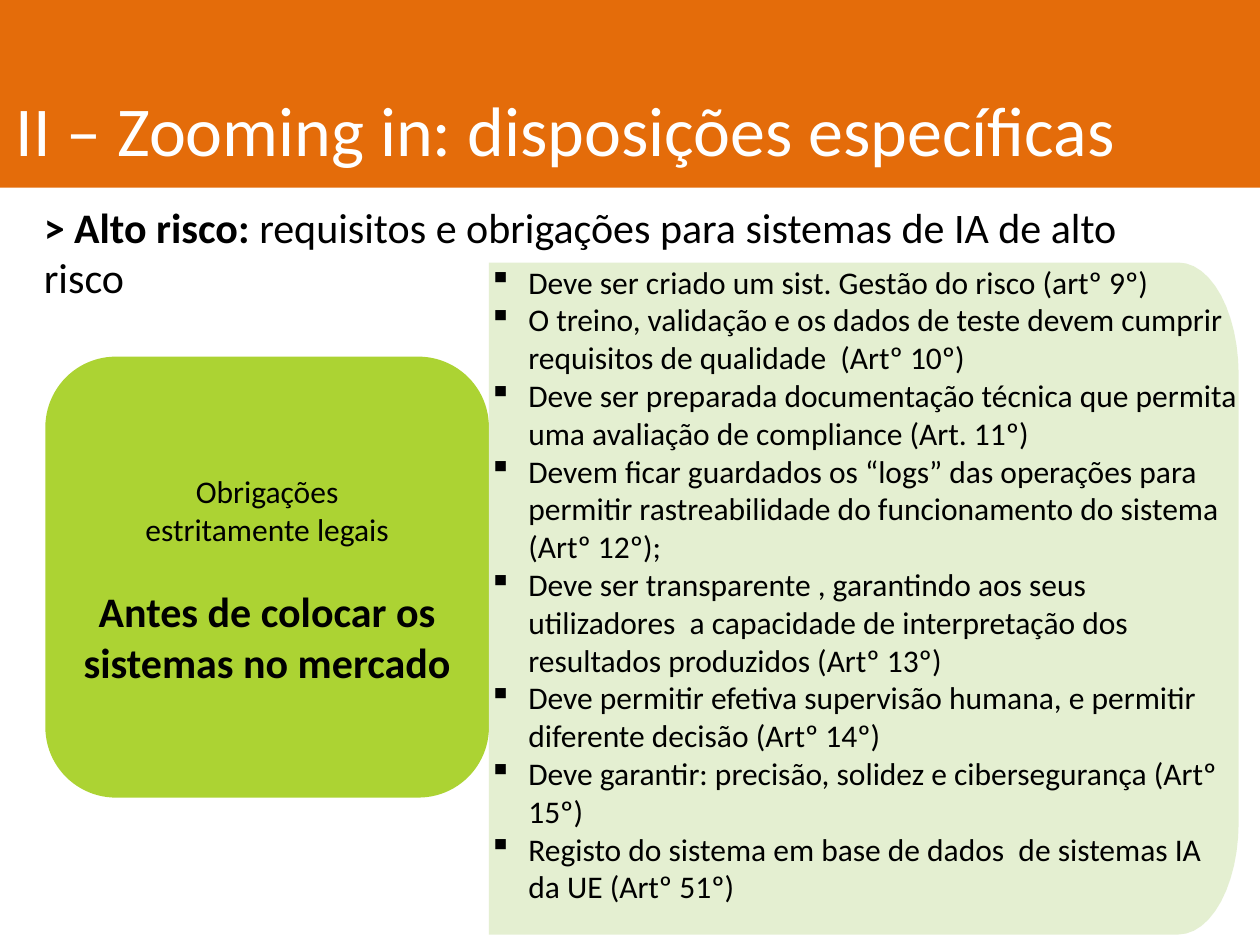
from math import cos, pi, sin

from lxml import etree
from pptx import Presentation
from pptx.dml.color import RGBColor
from pptx.enum.shapes import MSO_SHAPE
from pptx.enum.text import MSO_ANCHOR, MSO_AUTO_SIZE, PP_ALIGN
from pptx.oxml.ns import qn
from pptx.util import Pt

ROUNDED = MSO_SHAPE.ROUNDED_RECTANGLE
TOP, BOTTOM = MSO_ANCHOR.TOP, MSO_ANCHOR.BOTTOM
LEFT, CENTER = PP_ALIGN.LEFT, PP_ALIGN.CENTER
NO_FIT = MSO_AUTO_SIZE.NONE

ORANGE = RGBColor(0xE4, 0x6C, 0x0A)
GREEN = RGBColor(0xAC, 0xD3, 0x33)
PALE_GREEN = RGBColor(0xE2, 0xEE, 0xCD)
WHITE = RGBColor(0xFF, 0xFF, 0xFF)
BLACK = RGBColor(0, 0, 0)
FONT = "Calibri"
HANGING = Pt(22.5)

REQUIREMENTS = [
    "Deve ser criado um sist. Gestão do risco (artº 9º)",
    "O treino, validação e os dados de teste devem cumprir requisitos de qualidade  (Artº 10º)",
    "Deve ser preparada documentação técnica que permita uma avaliação de compliance (Art. 11º)",
    "Devem ficar guardados os “logs” das operações para permitir rastreabilidade "
    "do funcionamento do sistema (Artº 12º);",
    "Deve ser transparente , garantindo aos seus utilizadores  a capacidade de "
    "interpretação dos resultados produzidos (Artº 13º)",
    "Deve permitir efetiva supervisão humana, e permitir diferente decisão (Artº 14º)",
    "Deve garantir: precisão, solidez e cibersegurança (Artº 15º)",
    "Registo do sistema em base de dados  de sistemas IA da UE (Artº 51º)",
]


def style(font, size, color=BLACK, bold=False):
    font.name, font.size, font.bold = FONT, Pt(size), bold
    font.color.rgb = color


def set_frame(frame, anchor, left=0, top=0, bottom=0):
    frame.word_wrap = True
    frame.auto_size = NO_FIT
    frame.vertical_anchor = anchor
    frame.margin_left, frame.margin_right = Pt(left), 0
    frame.margin_top, frame.margin_bottom = Pt(top), Pt(bottom)


def fill_plain(shape, color):
    shape.shadow.inherit = False
    shape.fill.solid()
    shape.fill.fore_color.rgb = color
    shape.line.fill.background()


def add_title(slide, x, y, width, height):
    title = slide.shapes.title
    title.left, title.top, title.width, title.height = map(Pt, (x, y, width, height))
    title.fill.solid()
    title.fill.fore_color.rgb = ORANGE
    frame = title.text_frame
    frame.text = "II – Zooming in: disposições específicas"
    set_frame(frame, BOTTOM, left=9, bottom=9.7)
    frame.paragraphs[0].alignment = LEFT
    style(frame.paragraphs[0].runs[0].font, 40, WHITE)


def add_subtitle(slide, x, y, width, height):
    subtitle = slide.shapes.add_textbox(*map(Pt, (x, y, width, height)))
    subtitle.text_frame.word_wrap = True
    paragraph = subtitle.text_frame.paragraphs[0]
    for text, bold in (
        ("> Alto risco: ", True),
        ("requisitos e obrigações para sistemas de IA de alto risco", False),
    ):
        run = paragraph.add_run()
        run.text = text
        style(run.font, 24, bold=bold)


def add_obligations(slide, x, y, width, height):
    card = slide.shapes.add_shape(ROUNDED, *map(Pt, (x, y, width, height)))
    card.adjustments[0] = 0.16
    fill_plain(card, GREEN)
    frame = card.text_frame
    frame.text = "Obrigações\nestritamente legais\nAntes de colocar os sistemas no mercado"
    set_frame(frame, TOP, top=54)
    for paragraph, size, bold in zip(frame.paragraphs, (18, 18, 24), (False, False, True)):
        paragraph.alignment = CENTER
        style(paragraph.runs[0].font, size, bold=bold)
    frame.paragraphs[-1].space_before = Pt(22)


def add_requirements(slide, x, y, width, height):
    # Panel with elliptical corners on the right side only
    corner_w, corner_h, steps = 34.5, 64, 12
    arc = [(corner_w * (1 - sin(i * pi / 2 / steps)), corner_h * (1 - cos(i * pi / 2 / steps)))
           for i in range(steps + 1)]
    upper = [(x + width - dx, y + dy) for dx, dy in arc]
    lower = [(x + width - dx, y + height - dy) for dx, dy in reversed(arc)]
    outline = [(Pt(px), Pt(py)) for px, py in upper + lower + [(x, y + height)]]
    builder = slide.shapes.build_freeform(Pt(x), Pt(y))
    builder.add_line_segments(outline, close=True)
    panel = builder.convert_to_shape()
    fill_plain(panel, PALE_GREEN)
    fill_color = panel.fill._xPr.find(qn("a:solidFill"))[0]
    etree.SubElement(fill_color, qn("a:alpha")).set("val", "90000")

    # Bulleted requirements
    frame = panel.text_frame
    frame.text = "\n".join(REQUIREMENTS)
    set_frame(frame, TOP)
    for paragraph in frame.paragraphs:
        properties = paragraph._p.get_or_add_pPr()
        properties.set("marL", str(HANGING))
        properties.set("indent", str(-HANGING))
        etree.SubElement(properties, qn("a:buChar")).set("char", "▪")
        paragraph.alignment = LEFT
        style(paragraph.runs[0].font, 18)


def main():
    prs = Presentation()
    prs.slide_width, prs.slide_height = Pt(720), Pt(540)
    slide = prs.slides.add_slide(prs.slide_layouts[5])
    add_title(slide, 0, 0, 720, 107.3)
    add_subtitle(slide, 18, 111.6, 654, 65.5)
    add_obligations(slide, 25.9, 203.8, 253.5, 252)
    add_requirements(slide, 279.4, 150, 428.4, 384)
    prs.save("out.pptx")


if __name__ == "__main__":
    main()
